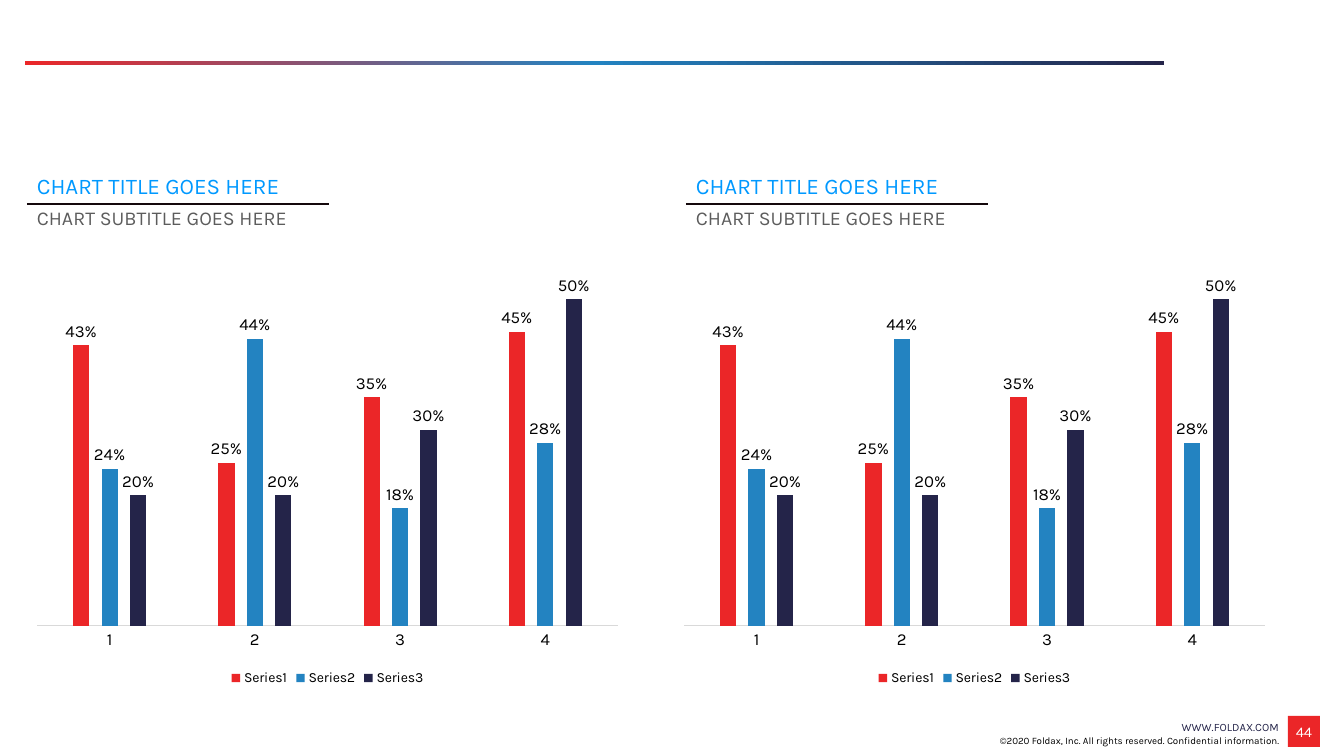
from copy import deepcopy

from lxml.etree import SubElement
from pptx import Presentation
from pptx.chart.data import CategoryChartData
from pptx.dml.color import RGBColor
from pptx.enum.chart import XL_CHART_TYPE, XL_LABEL_POSITION, XL_LEGEND_POSITION, XL_TICK_MARK
from pptx.enum.shapes import MSO_CONNECTOR, MSO_SHAPE
from pptx.enum.text import MSO_ANCHOR, PP_ALIGN
from pptx.oxml.ns import qn
from pptx.util import Emu, Pt

PX = 12192000 / 1344
FONT = "Karla"
COLORS = {
    "red": "EB2628", "blue": "2383C1", "navy": "242449", "title": "0099FF",
    "subtitle": "5C5C5C", "rule": "14080C", "axis": "D9D9D9", "muted": "B7B7B7",
    "black": "000000", "white": "FFFFFF",
}
SERIES = [
    ("Series1", "red", (0.43, 0.25, 0.35, 0.45)),
    ("Series2", "blue", (0.24, 0.44, 0.18, 0.28)),
    ("Series3", "navy", (0.20, 0.20, 0.30, 0.50)),
]


def px(*lengths):
    return [Emu(round(n * PX)) for n in lengths]


def style(font, size, color):
    font.name = FONT
    font.size = Pt(size)
    font.color.rgb = RGBColor.from_string(COLORS[color])


prs = Presentation()
prs.slide_width, prs.slide_height = px(1344, 756)
slide = prs.slides.add_slide(prs.slide_layouts[6])
shapes = slide.shapes

# Gradient band across the top
band = shapes.add_shape(MSO_SHAPE.RECTANGLE, *px(25, 61, 1139, 4))
band.shadow.inherit = False
band.line.fill.background()
band.fill.gradient()
band.fill.gradient_angle = 0
stop_list = band._element.spPr.find(qn("a:gradFill")).find(qn("a:gsLst"))
stop_list.insert(1, deepcopy(stop_list[0]))
for stop, position, color in zip(band.fill.gradient_stops, (0, 0.5, 1), ("red", "blue", "navy")):
    stop.position = position
    stop.color.rgb = RGBColor.from_string(COLORS[color])

# Page number badge
badge = shapes.add_shape(MSO_SHAPE.RECTANGLE, *px(1288, 716, 32, 31))
badge.shadow.inherit = False
badge.fill.solid()
badge.fill.fore_color.rgb = RGBColor.from_string(COLORS["red"])
badge.line.fill.background()
tf = badge.text_frame
tf.margin_left, tf.margin_top, tf.margin_right, tf.margin_bottom = px(2, 2, 2, 2)
tf.vertical_anchor = MSO_ANCHOR.MIDDLE
p = tf.paragraphs[0]
p.alignment = PP_ALIGN.CENTER
r = p.add_run()
r.text = "44"
style(r.font, 10.5, "white")

# Two charts, each under a heading with a rule
data = CategoryChartData(number_format="0%")
data.categories = ["1", "2", "3", "4"]
for name, color, values in SERIES:
    data.add_series(name, values)

for chart_x, heading_x in ((25, 27), (672, 686)):
    frame = shapes.add_chart(XL_CHART_TYPE.COLUMN_CLUSTERED, *px(chart_x, 225, 605, 465), data)
    chart = frame.chart
    chart.has_title = False
    style(chart.font, 10, "muted")
    chart.has_legend = True
    chart.legend.position = XL_LEGEND_POSITION.BOTTOM
    chart.legend.include_in_layout = False
    style(chart.legend.font, 10, "black")

    axis = chart.category_axis
    axis.major_tick_mark = XL_TICK_MARK.NONE
    axis.format.line.color.rgb = RGBColor.from_string(COLORS["axis"])
    axis.format.line.width = Pt(0.75)
    style(axis.tick_labels.font, 12, "black")
    axis = chart.value_axis
    axis.minimum_scale, axis.maximum_scale = 0, 0.6
    axis.has_major_gridlines = False
    axis.visible = False

    plot = chart.plots[0]
    plot.vary_by_categories = False
    plot.gap_width, plot.overlap = 444, -75
    for series, (name, color, values) in zip(plot.series, SERIES):
        series.format.fill.solid()
        series.format.fill.fore_color.rgb = RGBColor.from_string(COLORS[color])
        labels = series.data_labels
        labels.show_value = True
        labels.position = XL_LABEL_POSITION.OUTSIDE_END
        labels.number_format = "0%"
        labels.number_format_is_linked = False
        style(labels.font, 12, "black")

    for text, y, height, size, color in (
        ("CHART TITLE GOES HERE", 167, 37, 16, "title"),
        ("CHART SUBTITLE GOES HERE", 201, 34, 14, "subtitle"),
    ):
        tf = shapes.add_textbox(*px(heading_x, y, 302, height)).text_frame
        tf.word_wrap = False
        r = tf.paragraphs[0].add_run()
        r.text = text
        style(r.font, size, color)

    rule = shapes.add_connector(MSO_CONNECTOR.STRAIGHT, *px(heading_x, 204, heading_x + 302, 204))
    rule.line.color.rgb = RGBColor.from_string(COLORS["rule"])
    rule.line.width = Pt(1.5)
    SubElement(rule._element.spPr, qn("a:effectLst"))

# Footer lines
for text, box, anchor, size, color in (
    ("WWW.FOLDAX.COM", (1053, 710, 236, 34), MSO_ANCHOR.MIDDLE, 8, "navy"),
    ("©2020 Foldax, Inc. All rights reserved. Confidential information.",
     (836, 711, 453, 40), MSO_ANCHOR.BOTTOM, 7, "black"),
):
    tf = shapes.add_textbox(*px(*box)).text_frame
    tf.word_wrap = True
    tf.vertical_anchor = anchor
    p = tf.paragraphs[0]
    p.alignment = PP_ALIGN.RIGHT
    r = p.add_run()
    r.text = text
    style(r.font, size, color)

prs.save("out.pptx")
